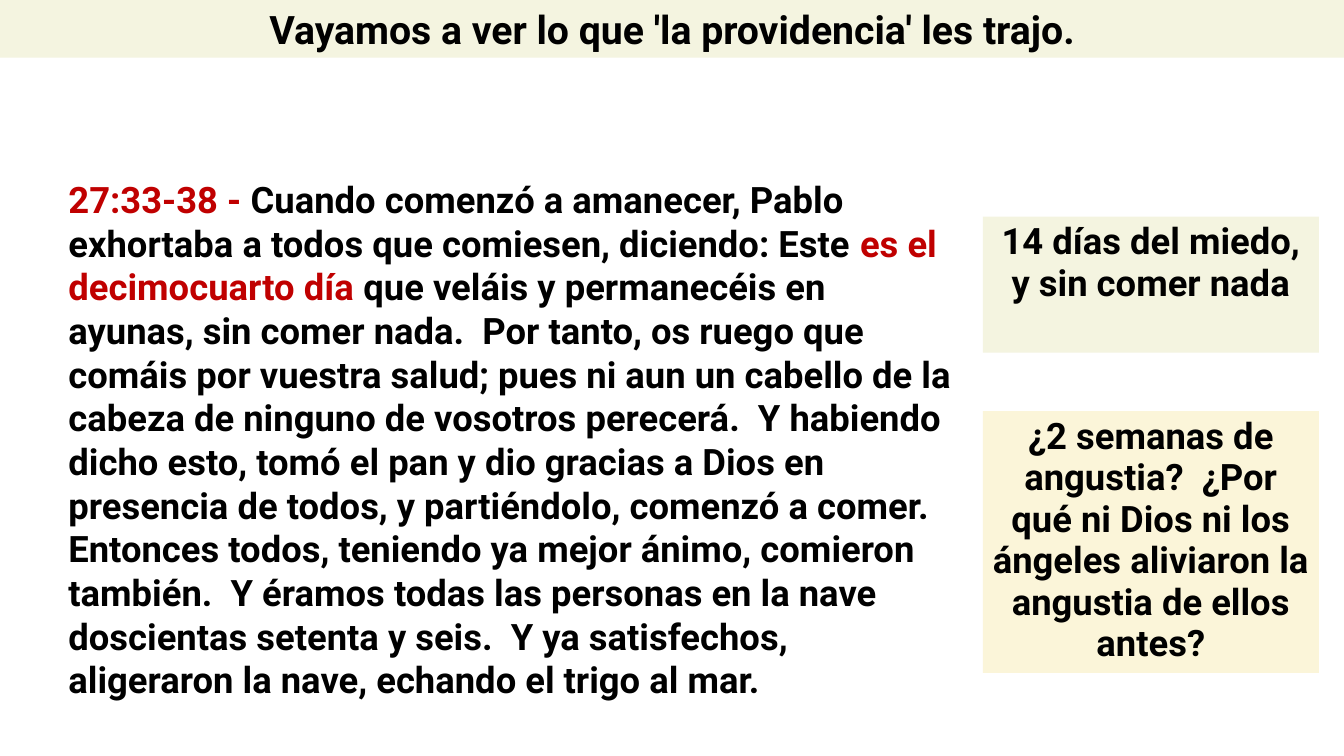
from lxml.etree import SubElement
from pptx import Presentation
from pptx.dml.color import RGBColor
from pptx.enum.shapes import MSO_SHAPE
from pptx.enum.text import MSO_ANCHOR, MSO_AUTO_SIZE, PP_ALIGN
from pptx.oxml.ns import qn
from pptx.util import Cm, Pt

BLACK, RED = "000000", "C00000"
IVORY, CREAM = "F4F4E0", "FBF5D9"

HEADING = "Vayamos a ver lo que 'la providencia' les trajo."
PASSAGE = [
    ("27:33-38 - ", RED),
    ("Cuando comenzó a amanecer, Pablo exhortaba a todos que comiesen, diciendo: Este ", BLACK),
    ("es el decimocuarto día ", RED),
    ("que veláis y permanecéis en ayunas, sin comer nada.  Por tanto, os ruego que "
     "comáis por vuestra salud; pues ni aun un cabello de la cabeza de ninguno de "
     "vosotros perecerá.  Y habiendo dicho esto, tomó el pan y dio gracias a Dios en "
     "presencia de todos, y partiéndolo, comenzó a comer.  Entonces todos, teniendo ya "
     "mejor ánimo, comieron también.  Y éramos todas las personas en la nave doscientas "
     "setenta y seis.  Y ya satisfechos, aligeraron la nave, echando el trigo al mar.", BLACK),
]
FEAR = [[("14 días del miedo,", BLACK)], [("y sin comer nada", BLACK)]]
QUESTION = [[("¿2 semanas de angustia?  ¿Por qué ni Dios ni los ángeles aliviaron "
              "la angustia de ellos antes?", BLACK)]]


def color(value):
    return RGBColor.from_string(value)


def fill_box(box, value):
    box.fill.solid()
    box.fill.fore_color.rgb = color(value)
    box.line.fill.background()


def place(box, left, top, width, height):
    box.left, box.top, box.width, box.height = Cm(left), Cm(top), Cm(width), Cm(height)


def write_text(box, paragraphs, size=26, align=PP_ALIGN.LEFT, spacing=1.0, anchor=MSO_ANCHOR.TOP):
    frame = box.text_frame
    frame.word_wrap = True
    frame.auto_size = MSO_AUTO_SIZE.NONE
    frame.vertical_anchor = anchor
    for index, spans in enumerate(paragraphs):
        para = frame.add_paragraph() if index else frame.paragraphs[0]
        para.alignment = align
        para.line_spacing = spacing
        para.space_before = Pt(0)
        for words, value in spans:
            span = para.add_run()
            span.text = words
            span.font.name = "Roboto"
            span.font.size = Pt(size)
            span.font.bold = True
            span.font.color.rgb = color(value)


def remove_bullets(box):
    for para in box.text_frame.paragraphs:
        properties = para._p.get_or_add_pPr()
        properties.set("marL", "0")
        properties.set("indent", "0")
        SubElement(properties, qn("a:buNone"))


def add_note(page, paragraphs, top, height, value):
    box = page.shapes.add_shape(MSO_SHAPE.RECTANGLE, 0, 0, 0, 0)
    box.shadow.inherit = False
    place(box, 24.77, top, 8.47, height)
    fill_box(box, value)
    write_text(box, paragraphs, align=PP_ALIGN.CENTER, spacing=0.95)


def main():
    deck = Presentation()
    deck.slide_width, deck.slide_height = Cm(33.87), Cm(19.05)
    page = deck.slides.add_slide(deck.slide_layouts[1])

    title = page.shapes.title
    place(title, 0, 0, 33.87, 1.45)
    fill_box(title, IVORY)
    write_text(title, [[(HEADING, BLACK)]], size=28, align=PP_ALIGN.CENTER,
               anchor=MSO_ANCHOR.MIDDLE)

    passage = page.placeholders[1]
    place(passage, 1.47, 4.34, 22.86, 14.71)
    write_text(passage, [PASSAGE])
    remove_bullets(passage)

    add_note(page, FEAR, 5.46, 3.43, IVORY)
    add_note(page, QUESTION, 10.36, 6.6, CREAM)
    deck.save("out.pptx")


if __name__ == "__main__":
    main()
